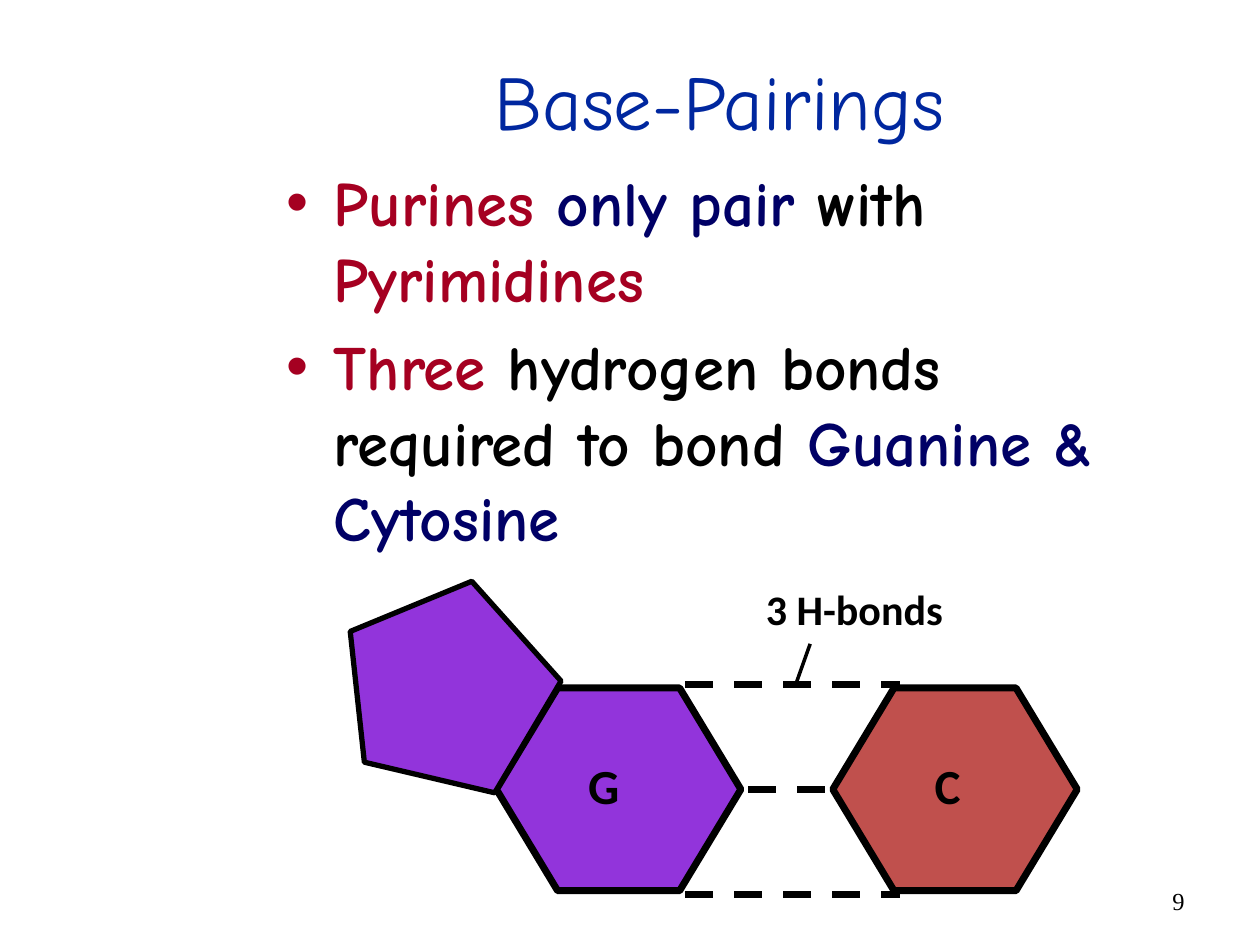
from lxml.etree import SubElement
from pptx import Presentation
from pptx.dml.color import RGBColor as Rgb
from pptx.enum.dml import MSO_LINE_DASH_STYLE as Dash
from pptx.enum.shapes import MSO_CONNECTOR as Connector, MSO_SHAPE as Shape
from pptx.enum.text import MSO_ANCHOR as Anchor, MSO_AUTO_SIZE as Fit, PP_ALIGN as Align
from pptx.oxml.ns import qn
from pptx.util import Inches, Pt

COLORS = {"title": "00279F", "red": "A50021", "navy": "000066", "black": "000000",
          "guanine": "9234DB", "cytosine": "C0504D"}


def add_run(paragraph, text, color, **formats):
    run = paragraph.add_run()
    run.text = text
    run.font.color.rgb = Rgb.from_string(COLORS[color])
    for name, value in formats.items():
        setattr(run.font, name, value)


def outline(part, width):
    part.line.color.rgb = Rgb.from_string(COLORS["black"])
    part.line.width = Pt(width)


deck = Presentation()
deck.slide_width, deck.slide_height = Inches(10), Inches(7.5)
slide = deck.slides.add_slide(deck.slide_layouts[1])
shapes = slide.shapes
title, body = shapes.title, slide.placeholders[1]

# Title and body share one column
for holder, top, height, anchor in [(title, 0.33, 0.92, Anchor.MIDDLE),
                                    (body, 1.25, 5.42, Anchor.TOP)]:
    holder.left, holder.width = Inches(2.17), Inches(7.08)
    holder.top, holder.height = Inches(top), Inches(height)
    for name, value in {"auto_size": Fit.NONE, "word_wrap": True,
                        "vertical_anchor": anchor}.items():
        setattr(holder.text_frame, name, value)

heading = title.text_frame.paragraphs[0]
heading.alignment = Align.CENTER
add_run(heading, "Base-Pairings", "title", name="Comic Neue", size=Pt(44))

# Pairing rules
rules = [
    [("Purines ", "red"), ("only pair ", "navy"), ("with", "black"), (" Pyrimidines", "red")],
    [("Three", "red"), (" hydrogen bonds required to bond ", "black"),
     ("Guanine & Cytosine", "navy")],
]
for index, rule in enumerate(rules):
    bullet = body.text_frame.add_paragraph() if index else body.text_frame.paragraphs[0]
    bullet.space_before = Pt(7.2 * index)
    props = bullet._p.get_or_add_pPr()
    props.set("marL", str(Inches(0.38)))
    props.set("indent", str(-Inches(0.38)))
    SubElement(props, qn("a:buChar"), char="•")
    for text, color in rule:
        add_run(bullet, text, color, name="Comic Neue", size=Pt(36), bold=True)

# Six-sided rings
ring_top, ring_width, ring_height = 5.46, 1.94, 1.61
for left, base in [(6.61, "cytosine"), (3.94, "guanine")]:
    ring = shapes.add_shape(Shape.HEXAGON, Inches(left), Inches(ring_top),
                            Inches(ring_width), Inches(ring_height))
    ring.adjustments[0] = 0.302
    ring.shadow.inherit = False
    ring.fill.solid()
    ring.fill.fore_color.rgb = Rgb.from_string(COLORS[base])
    outline(ring, 4)

# Hydrogen bonds and the leader to their label
bonds = [(5.44, 5.43, 7.14, 5.43), (5.94, 6.27, 6.64, 6.27), (5.44, 7.1, 7.14, 7.1)]
leader = (6.43, 5.11, 6.32, 5.42)
for ends in bonds + [leader]:
    link = shapes.add_connector(Connector.STRAIGHT, *map(Inches, ends))
    outline(link, 2 if ends == leader else 4)
    if ends != leader:
        link.line.dash_style = Dash.DASH
    SubElement(link._element.spPr, qn("a:effectLst"))

# Five-sided ring of guanine
five_ring = shapes.add_shape(Shape.REGULAR_PENTAGON, Inches(2.65), Inches(4.61),
                             Inches(1.67), Inches(1.64))
five_ring.rotation = 300.7
five_ring.shadow.inherit = False
five_ring.fill.solid()
five_ring.fill.fore_color.rgb = Rgb.from_string(COLORS["guanine"])
outline(five_ring, 3)

# Labels and page number
labels = [
    ("C", 7.32, 5.95, 0.44, 0.56, "Calibri", 28, True, Align.LEFT),
    ("G", 4.57, 5.95, 0.46, 0.56, "Calibri", 28, True, Align.LEFT),
    ("3 H-bonds", 5.98, 4.58, 1.91, 0.5, "Calibri", 24, True, Align.LEFT),
    ("9", 7.17, 6.95, 2.33, 0.4, "Times New Roman", 14, False, Align.RIGHT),
]
for text, left, top, width, height, font, size, bold, align in labels:
    label = shapes.add_textbox(Inches(left), Inches(top), Inches(width), Inches(height))
    label.text_frame.word_wrap = align == Align.RIGHT
    label.text_frame.vertical_anchor = Anchor.MIDDLE if align == Align.RIGHT else Anchor.TOP
    line = label.text_frame.paragraphs[0]
    line.alignment = align
    add_run(line, text, "black", name=font, size=Pt(size), bold=bold)

deck.save("out.pptx")
